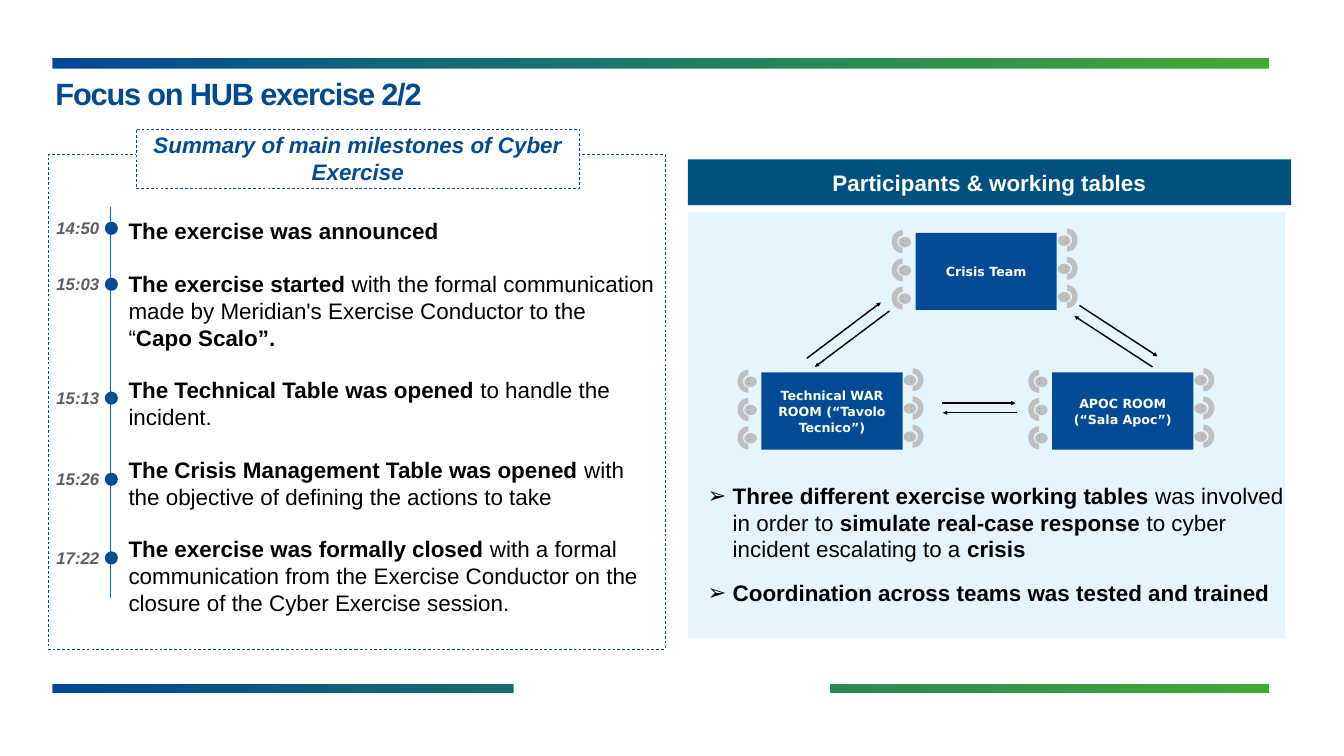
from dataclasses import dataclass

from lxml.etree import SubElement
from pptx import Presentation
from pptx.dml.color import RGBColor
from pptx.enum.dml import MSO_LINE
from pptx.enum.shapes import MSO_CONNECTOR, MSO_SHAPE as SHAPE
from pptx.enum.text import MSO_ANCHOR as ANCHOR, MSO_AUTO_SIZE, PP_ALIGN as ALIGN
from pptx.oxml.ns import qn
from pptx.util import Inches, Pt

BLUE = RGBColor(0x03, 0x4B, 0x95)
TITLE_BLUE = RGBColor(0x00, 0x49, 0x95)
BAR_BLUE = RGBColor(0x01, 0x49, 0x95)
BAR_GREEN = RGBColor(0x41, 0xAA, 0x34)
HEADER_BLUE = RGBColor(0x00, 0x51, 0x80)
PANEL_BLUE = RGBColor(0xE5, 0xF5, 0xFF)
LINE_BLUE = RGBColor(0x00, 0x70, 0xC0)
TIME_GREY = RGBColor(0x5E, 0x5E, 0x5E)
SEAT_GREY = RGBColor(0xBF, 0xBF, 0xBF)
WHITE = RGBColor(0xFF, 0xFF, 0xFF)
BLACK = RGBColor(0, 0, 0)

Box = tuple[float, float, float, float]
Run = tuple[str, bool]  # text, bold


@dataclass(frozen=True)
class Style:
    size: float
    color: RGBColor
    font: str = "Arial"
    italic: bool = False


@dataclass(frozen=True)
class Milestone:
    time: str
    top: float
    runs: list[Run]


@dataclass(frozen=True)
class Table:
    left: float
    top: float
    lines: list[str]


@dataclass(frozen=True)
class Arrow:
    start: tuple[float, float]
    end: tuple[float, float]


BODY = Style(32, BLACK)
TABLE_TEXT = Style(18, WHITE, "DejaVu Sans")

MILESTONES = [
    Milestone("14:50", 4.27, [("The exercise was announced", True)]),
    Milestone("15:03", 5.38, [
        ("The exercise started ", True),
        ("with the formal communication made by Meridian's Exercise Conductor to the “", False),
        ("Capo Scalo”.", True)]),
    Milestone("15:13", 7.64, [("The Technical Table was opened ", True),
                              ("to handle the incident.", False)]),
    Milestone("15:26", 9.25, [("The Crisis Management Table was opened ", True),
                              ("with the objective of defining the actions to take", False)]),
    Milestone("17:22", 10.81, [
        ("The exercise was formally closed ", True),
        ("with a formal communication from the Exercise Conductor on the closure "
         "of the Cyber Exercise session.", False)]),
]
FINDINGS: list[list[Run]] = [
    [("Three different exercise working tables ", True),
     ("was involved in order to ", False),
     ("simulate real-case response ", True),
     ("to cyber incident escalating to a ", False),
     ("crisis", True)],
    [("Coordination across teams was tested and trained", True)],
]
TABLES = [
    Table(18.17, 4.62, ["Crisis Team"]),
    Table(15.11, 7.39, ["Technical WAR ROOM (“Tavolo Tecnico”)"]),
    Table(20.88, 7.39, ["APOC ROOM", "(“Sala Apoc”)"]),
]
ARROWS = [
    Arrow((16.01, 7.11), (17.48, 6)), Arrow((17.65, 6.17), (16.17, 7.28)),
    Arrow((21.42, 6.06), (22.97, 7.07)), Arrow((22.87, 7.28), (21.32, 6.27)),
    Arrow((18.69, 8), (20.15, 8)), Arrow((20.18, 8.19), (18.71, 8.19)),
]


def add_block(shapes, kind, box: Box, fill: RGBColor | None = None, dashed=False, rotation=0):
    sp = shapes.add_shape(kind, *map(Inches, box))
    sp.shadow.inherit = False
    sp.rotation = rotation
    if fill is None:
        sp.fill.background()
    else:
        sp.fill.solid()
        sp.fill.fore_color.rgb = fill
    if dashed:
        sp.line.color.rgb = BLUE
        sp.line.width = Pt(1)
        sp.line.dash_style = MSO_LINE.DASH
    else:
        sp.line.fill.background()
    return sp


def add_line(shapes, start, end, color: RGBColor, width: float, arrow=False) -> None:
    line = shapes.add_connector(MSO_CONNECTOR.STRAIGHT, *map(Inches, (*start, *end)))
    line.line.color.rgb = color
    line.line.width = Pt(width)
    if arrow:
        SubElement(line.line._get_or_add_ln(), qn("a:tailEnd"), type="triangle")
    SubElement(line._element.spPr, qn("a:effectLst"))


def write(sp, paragraphs: list[list[Run]], style: Style, align=ALIGN.LEFT, anchor=ANCHOR.TOP,
          inset=(0.1, 0.05), spacing=1.0, before=0.0, after=0.0):
    tf = sp.text_frame
    tf.word_wrap = True
    tf.auto_size = MSO_AUTO_SIZE.NONE
    tf.vertical_anchor = anchor
    tf.margin_left = tf.margin_right = Inches(inset[0])
    tf.margin_top = tf.margin_bottom = Inches(inset[1])
    for i, runs in enumerate(paragraphs):
        p = tf.add_paragraph() if i else tf.paragraphs[0]
        p.alignment = align
        p.line_spacing = spacing
        p.space_before = Pt(before if i else 0)
        p.space_after = Pt(after)
        for text, bold in runs:
            r = p.add_run()
            r.text = text
            f = r.font
            f.name, f.size, f.bold, f.italic = style.font, Pt(style.size), bold, style.italic
            f.color.rgb = style.color
    return tf


def place(slide, idx: int, box: Box):
    """Move a placeholder to its box and in front of what is drawn so far."""
    sp = slide.placeholders[idx]
    sp.left, sp.top, sp.width, sp.height = map(Inches, box)
    slide.shapes._spTree.append(sp._element)
    return sp


def set_bullets(tf, char: str = "", indent: float = 0) -> None:
    for p in tf.paragraphs:
        pPr = p._p.get_or_add_pPr()
        pPr.set("marL", str(Inches(indent)))
        pPr.set("indent", str(-Inches(indent)))
        if char:
            SubElement(pPr, qn("a:buFont"), typeface="Arial")
            SubElement(pPr, qn("a:buChar"), char=char)
        else:
            SubElement(pPr, qn("a:buNone"))


def draw_frame(shapes) -> None:
    """Gradient bars: one gradient block, covered in white except for its edges."""
    bars = add_block(shapes, SHAPE.RECTANGLE, (1.04, 1.16, 24.15, 12.6), WHITE)
    bars.fill.gradient()
    bars.fill.gradient_angle = 0
    for stop, color in zip(bars.fill.gradient_stops, (BAR_BLUE, BAR_GREEN)):
        stop.color.rgb = color
    for box in ((0.97, 1.36, 24.72, 12.21), (10.19, 12.9, 6.28, 1.47)):
        add_block(shapes, SHAPE.RECTANGLE, box, WHITE)


def draw_milestones(slide) -> None:
    shapes = slide.shapes
    add_block(shapes, SHAPE.RECTANGLE, (0.96, 3.07, 12.24, 9.81), dashed=True)
    tf = write(place(slide, 1, (2.45, 4.26, 10.66, 8.72)), [m.runs for m in MILESTONES],
               BODY, before=36.8)
    set_bullets(tf)
    add_line(shapes, (2.19, 4.1), (2.19, 11.87), LINE_BLUE, 0.75)
    for m in MILESTONES:
        add_block(shapes, SHAPE.OVAL, (2.08, m.top + 0.13, 0.26, 0.26), BLUE)
        label = shapes.add_textbox(*map(Inches, (1.02, m.top, 1.19, 0.5)))
        write(label, [[(m.time, True)]], Style(24, TIME_GREY, italic=True))
    badge = add_block(shapes, SHAPE.RECTANGLE, (2.7, 2.56, 8.8, 1.18), WHITE, dashed=True)
    write(badge, [[("Summary of main milestones of Cyber Exercise", True)]],
          Style(32, BLUE, italic=True), ALIGN.CENTER)


def draw_table(shapes, table: Table) -> None:
    """A working table with three seats on either side."""
    sp = add_block(shapes, SHAPE.RECTANGLE, (table.left, table.top, 2.8, 1.53), BLUE)
    write(sp, [[(line, True)] for line in table.lines], TABLE_TEXT, ALIGN.CENTER,
          ANCHOR.MIDDLE, (0, 0.07), 1.06)
    for dx, dy, face_dx, rotation in ((2.77, -0.07, 0.07, 90), (-0.49, -0.04, 0.17, 270)):
        for row in range(3):
            x, y = table.left + dx, table.top + dy + row * 0.56
            add_block(shapes, SHAPE.BLOCK_ARC, (x, y, 0.46, 0.43), SEAT_GREY, rotation=rotation)
            add_block(shapes, SHAPE.SMILEY_FACE, (x + face_dx, y + 0.1, 0.21, 0.25), SEAT_GREY,
                      rotation=rotation)


def draw_participants(slide) -> None:
    shapes = slide.shapes
    add_block(shapes, SHAPE.RECTANGLE, (13.65, 4.21, 11.85, 8.45), PANEL_BLUE)
    for table in TABLES:
        draw_table(shapes, table)
    for arrow in ARROWS:
        add_line(shapes, arrow.start, arrow.end, BLACK, 2, arrow=True)
    header = add_block(shapes, SHAPE.RECTANGLE, (13.65, 3.16, 11.97, 0.91), HEADER_BLUE)
    write(header, [[("Participants & working tables", True)]], Style(32, WHITE),
          ALIGN.CENTER, ANCHOR.MIDDLE, (0.06, 0.06))
    tf = write(place(slide, 2, (13.98, 9.5, 11.66, 2.6)), FINDINGS, BODY,
               inset=(0.06, 0.06), before=12, after=12)
    set_bullets(tf, "➢", 0.5)


def main() -> None:
    prs = Presentation()
    prs.slide_width, prs.slide_height = Inches(26.67), Inches(15)
    slide = prs.slides.add_slide(prs.slide_layouts[3])
    draw_frame(slide.shapes)
    tf = write(place(slide, 0, (1.04, 1.57, 24.15, 0.79)), [[("Focus on HUB exercise 2/2", True)]],
               Style(43.9, TITLE_BLUE), inset=(0.06, 0.06), spacing=0.8)
    tf.paragraphs[0].runs[0].font._element.set("spc", "-170")
    draw_milestones(slide)
    draw_participants(slide)
    prs.save("out.pptx")


if __name__ == "__main__":
    main()
